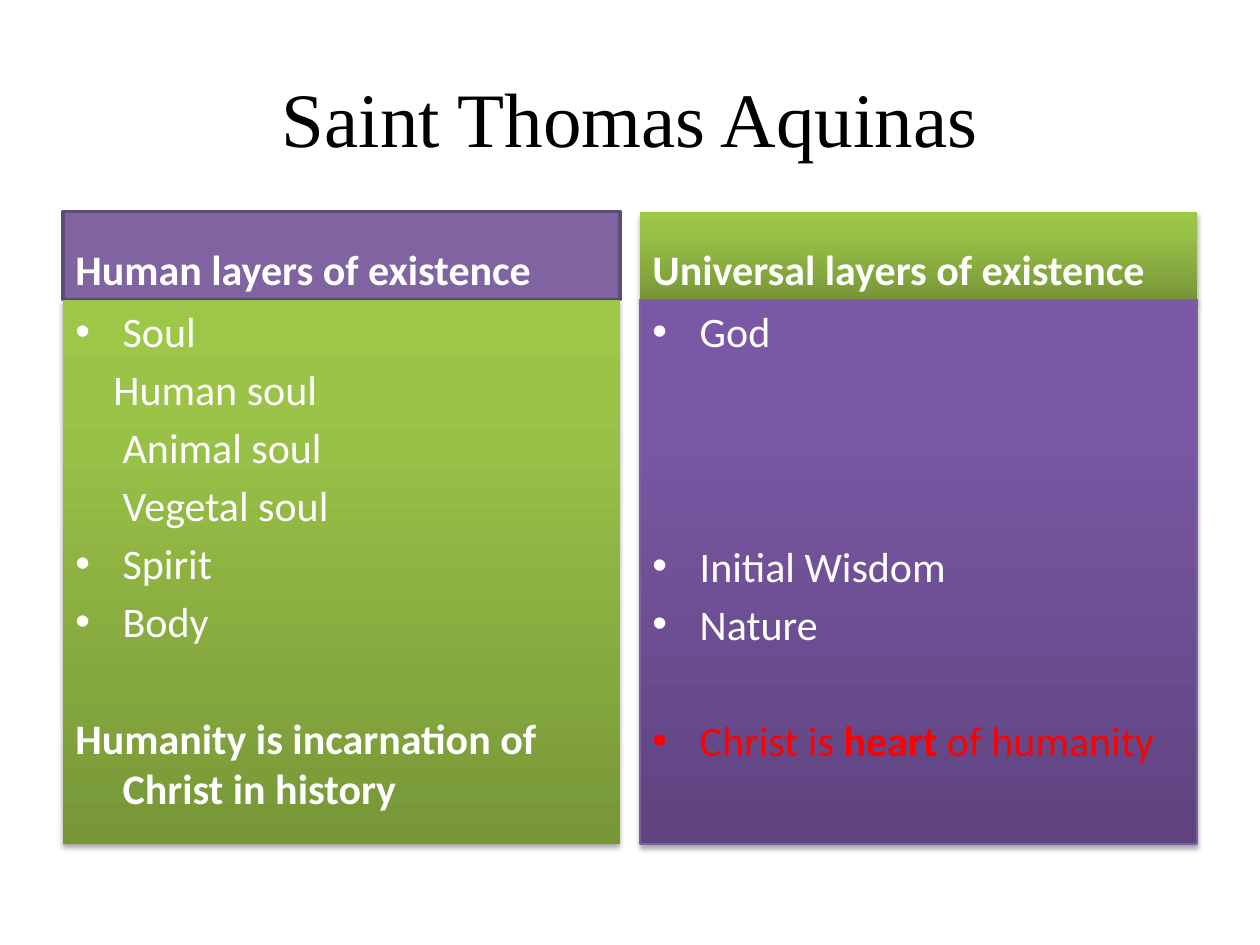
import copy
import pptx
import pptx.dml.color
import pptx.enum.shapes
import pptx.enum.text
import pptx.oxml
import pptx.oxml.ns
import pptx.util
from pptx.util import Pt

NS = pptx.oxml.ns.nsdecls("a")
ANCHOR = pptx.enum.text.MSO_ANCHOR
ALIGN = pptx.enum.text.PP_ALIGN
RECT = pptx.enum.shapes.MSO_SHAPE.RECTANGLE
rgb = pptx.dml.color.RGBColor.from_string


def add_text(p, text, size=24, font="Calibri", color="FFFFFF", bold=False):
    r = p.add_run()
    r.text = text
    r.font.size = Pt(size)
    r.font.name = font
    r.font.bold = bold
    r.font.color.rgb = rgb(color)


def add_panel(left, top, height, colors, line, line_width, shadow, anchor):
    s = slide.shapes.add_shape(RECT, Pt(left), Pt(top), Pt(PANEL_W), Pt(height))
    if len(colors) == 1:
        s.fill.solid()
        s.fill.fore_color.rgb = rgb(colors[0])
    else:
        s.fill.gradient()
        s.fill.gradient_angle = 90
        stops = s._element.spPr.find(".//" + pptx.oxml.ns.qn("a:gsLst"))
        stops.append(copy.deepcopy(stops[-1]))
        for stop, color, position in zip(s.fill.gradient_stops, colors, (0, 0.8, 1)):
            stop.color.rgb = rgb(color)
            stop.position = position
    if line:
        s.line.color.rgb = rgb(line)
        s.line.width = Pt(line_width)
    else:
        s.line.fill.background()
    s.shadow.inherit = False
    if shadow:
        effects = s._element.spPr.find(pptx.oxml.ns.qn("a:effectLst"))
        effects.append(pptx.oxml.parse_xml(
            f'<a:outerShdw {NS} blurRad="{Pt(3.1)}" dist="{Pt(1.8)}" dir="5400000" '
            'rotWithShape="0"><a:srgbClr val="000000"><a:alpha val="35000"/>'
            '</a:srgbClr></a:outerShdw>'))
    tf = s.text_frame
    tf.word_wrap = True
    tf.vertical_anchor = anchor
    return tf


prs = pptx.Presentation()
prs.slide_width, prs.slide_height = Pt(720), Pt(540)
slide = prs.slides.add_slide(prs.slide_layouts[5])

# Title
s = slide.shapes.title
s.left, s.top, s.width, s.height = Pt(36), Pt(21.6), Pt(648), Pt(90)
s.text_frame.vertical_anchor = ANCHOR.MIDDLE
p = s.text_frame.paragraphs[0]
p.alignment = ALIGN.CENTER
add_text(p, "Saint Thomas Aquinas", size=44, font="Times New Roman", color="000000")

# Layout and colours of the two columns
PANEL_W = 318.25
HEAD_TOP, HEAD_H, BODY_H = 120.9, 50.4, 311
INDENT, SPACE, ROW = 27, 4.3, 33.6
GREEN = ["779737", "9BC348", "9DC746"]
PURPLE = ["5F4480", "7B58A6", "7C57A8"]

# Each item: text runs, bullet, left margin, first-line indent, rows skipped above
columns = [
    (36, "Human layers of existence",
     (["8064A2"], "5F4A78", 2, False), (GREEN, None, 0, True),
     [([("Soul", {})], True, INDENT, -INDENT, 0),
      ([("Human soul", {})], False, 21.7, 0, 0),
      ([("Animal soul", {})], False, INDENT, 0, 0),
      ([("Vegetal soul", {})], False, INDENT, 0, 0),
      ([("Spirit", {})], True, INDENT, -INDENT, 0),
      ([("Body", {})], True, INDENT, -INDENT, 0),
      ([("Humanity is incarnation of Christ in history", {"bold": True})],
       False, INDENT, -INDENT, 1)]),
    (365.75, "Universal layers of existence",
     (GREEN, None, 0, True), (PURPLE, "7D60A0", 0.75, True),
     [([("God", {})], True, INDENT, -INDENT, 0),
      ([("Initial Wisdom", {})], True, INDENT, -INDENT, 3),
      ([("Nature", {})], True, INDENT, -INDENT, 0),
      ([("Christ is ", {"color": "FF0000"}),
        ("heart", {"color": "FF0000", "bold": True}),
        (" of humanity", {"color": "FF0000"})], True, INDENT, -INDENT, 1)]),
]

for left, heading, head_style, body_style, items in columns:
    # Heading
    tf = add_panel(left, HEAD_TOP, HEAD_H, *head_style, ANCHOR.BOTTOM)
    p = tf.paragraphs[0]
    p.alignment = ALIGN.LEFT
    add_text(p, heading, bold=True)

    # List
    tf = add_panel(left, HEAD_TOP + HEAD_H, BODY_H, *body_style, ANCHOR.TOP)
    for i, (runs, bullet, margin, indent, skipped) in enumerate(items):
        p = tf.add_paragraph() if i else tf.paragraphs[0]
        p.alignment = ALIGN.LEFT
        p.space_before = Pt(SPACE + skipped * ROW)
        pPr = p._p.get_or_add_pPr()
        pPr.set("marL", str(Pt(margin)))
        pPr.set("indent", str(Pt(indent)))
        if bullet:
            pPr.append(pptx.oxml.parse_xml(f'<a:buFont {NS} typeface="Arial"/>'))
            pPr.append(pptx.oxml.parse_xml(f'<a:buChar {NS} char="•"/>'))
        for text, style in runs:
            add_text(p, text, **style)

prs.save("out.pptx")
